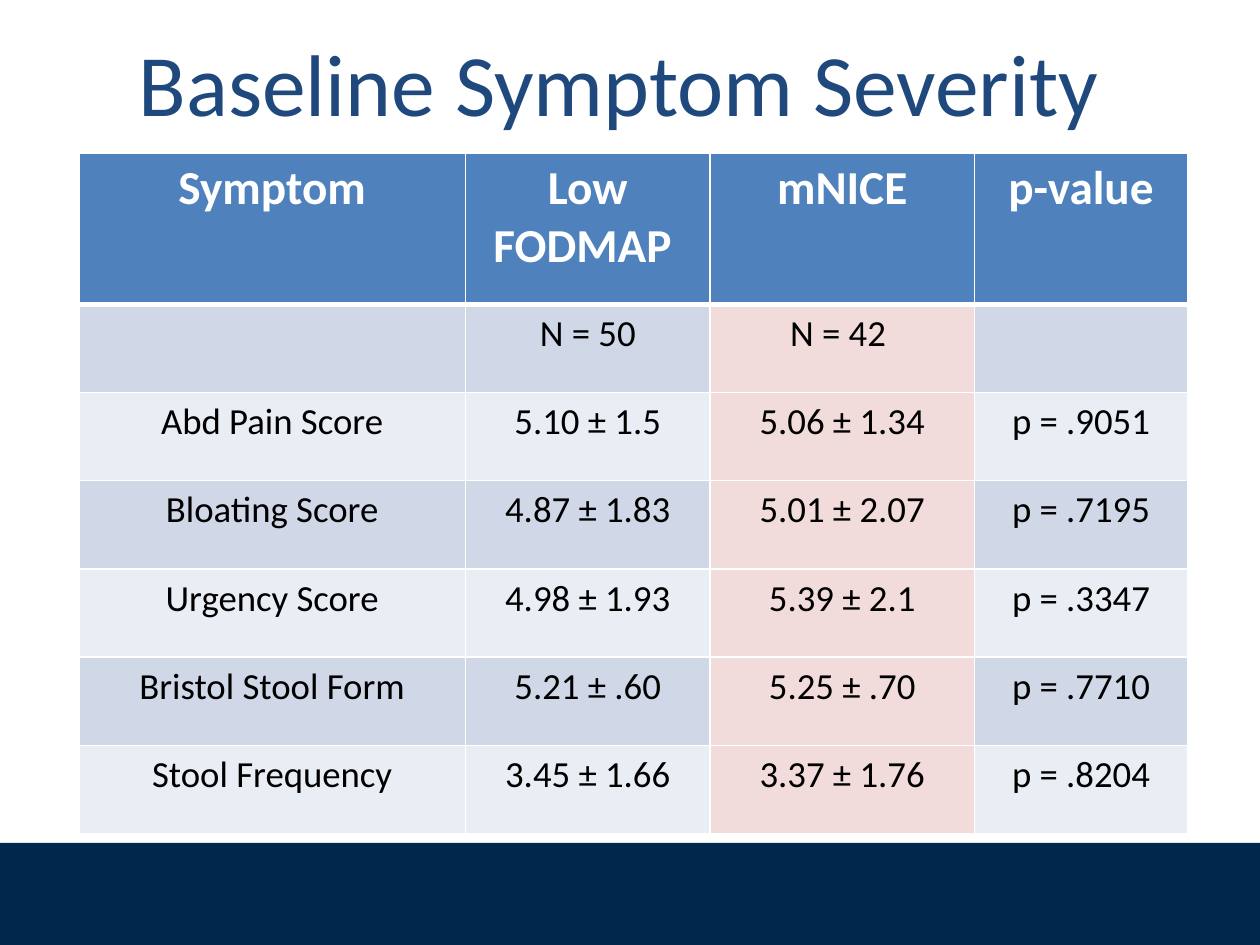
from dataclasses import dataclass

from lxml import etree
from pptx import Presentation
from pptx.dml.color import RGBColor
from pptx.enum.shapes import MSO_SHAPE
from pptx.enum.text import MSO_ANCHOR, MSO_AUTO_SIZE, PP_ALIGN
from pptx.oxml.ns import qn
from pptx.slide import Slide
from pptx.table import _Cell
from pptx.util import Pt

RECT = MSO_SHAPE.RECTANGLE
TOP = MSO_ANCHOR.TOP
NO_FIT = MSO_AUTO_SIZE.NONE
LEFT, CENTER = PP_ALIGN.LEFT, PP_ALIGN.CENTER


@dataclass(frozen=True)
class Theme:
    font: str = "Calibri"
    title: str = "1F497D"
    bar: str = "00274C"
    head: str = "4F81BD"
    dark: str = "D0D8E8"
    light: str = "E9EDF4"
    accent: str = "F2DCDB"
    white: str = "FFFFFF"
    black: str = "000000"
    title_size: float = 50
    head_size: float = 27
    body_size: float = 21


@dataclass(frozen=True)
class Style:
    fill: str
    color: str
    size: float
    bold: bool


THEME = Theme()
ACCENT_COL = 2
WIDTHS = (221, 139.7, 151.2, 121.7)
HEAD_HEIGHT, ROW_HEIGHT = 86.6, 50.4
ROWS = (
    ("Symptom", "Low FODMAP ", "mNICE", "p-value"),
    ("", "N = 50", "N = 42 ", ""),
    ("Abd Pain Score", "5.10 ± 1.5", "5.06 ± 1.34", "p = .9051"),
    ("Bloating Score", "4.87 ± 1.83", "5.01 ± 2.07", "p = .7195"),
    ("Urgency Score", "4.98 ± 1.93", "5.39 ± 2.1", "p = .3347"),
    ("Bristol Stool Form", "5.21 ± .60", "5.25 ± .70", "p = .7710"),
    ("Stool Frequency", "3.45 ± 1.66", "3.37 ± 1.76", "p = .8204"),
)


def rgb(code: str) -> RGBColor:
    return RGBColor.from_string(code)


def set_font(font, size: float, color: str, bold: bool = False) -> None:
    font.name = THEME.font
    font.size = Pt(size)
    font.bold = bold
    font.color.rgb = rgb(color)


def add_bar(slide: Slide) -> None:
    bar = slide.shapes.add_shape(RECT, 0, Pt(481.7), Pt(720), Pt(58.3))
    bar.shadow.inherit = False
    bar.fill.solid()
    bar.fill.fore_color.rgb = rgb(THEME.bar)
    bar.line.fill.background()


def add_title(slide: Slide, text: str) -> None:
    title = slide.shapes.title
    title.left, title.top = Pt(72), Pt(13)
    title.width, title.height = Pt(579), Pt(90)
    frame = title.text_frame
    frame.text = text
    frame.auto_size = NO_FIT
    frame.vertical_anchor = TOP
    para = frame.paragraphs[0]
    para.alignment = LEFT
    set_font(para.font, THEME.title_size, THEME.title)


def add_edges(cell: _Cell, top: float, bottom: float) -> None:
    props = cell._tc.get_or_add_tcPr()
    for side, width in (("L", 1), ("R", 1), ("T", top), ("B", bottom)):
        line = etree.SubElement(props, qn(f"a:ln{side}"), w=str(Pt(width)))
        fill = etree.SubElement(line, qn("a:solidFill"))
        etree.SubElement(fill, qn("a:srgbClr"), val=THEME.white)


def pick_style(row: int, col: int) -> Style:
    if row == 0:
        return Style(THEME.head, THEME.white, THEME.head_size, True)
    band = THEME.dark if row % 2 else THEME.light
    fill = THEME.accent if col == ACCENT_COL else band
    return Style(fill, THEME.black, THEME.body_size, False)


def fill_cell(cell: _Cell, text: str, style: Style) -> None:
    cell.margin_left = cell.margin_right = Pt(8)
    cell.margin_top = cell.margin_bottom = Pt(4)
    cell.vertical_anchor = TOP
    cell.fill.solid()
    cell.fill.fore_color.rgb = rgb(style.fill)
    cell.text = text
    para = cell.text_frame.paragraphs[0]
    para.alignment = CENTER
    set_font(para.font, style.size, style.color, style.bold)


def add_scores(slide: Slide) -> None:
    heights = [HEAD_HEIGHT] + [ROW_HEIGHT] * (len(ROWS) - 1)
    table = slide.shapes.add_table(
        len(ROWS), len(WIDTHS), Pt(45), Pt(87.3), Pt(sum(WIDTHS)), Pt(sum(heights))
    ).table
    for column, width in zip(table.columns, WIDTHS):
        column.width = Pt(width)
    for row, (height, texts) in enumerate(zip(heights, ROWS)):
        table.rows[row].height = Pt(height)
        for col, text in enumerate(texts):
            cell = table.cell(row, col)
            add_edges(cell, 3 if row == 1 else 1, 3 if row == 0 else 1)
            fill_cell(cell, text, pick_style(row, col))


def main() -> None:
    deck = Presentation()
    deck.slide_width, deck.slide_height = Pt(720), Pt(540)
    slide = deck.slides.add_slide(deck.slide_layouts[5])
    add_bar(slide)
    add_scores(slide)
    add_title(slide, "Baseline Symptom Severity")
    deck.save("out.pptx")


if __name__ == "__main__":
    main()
